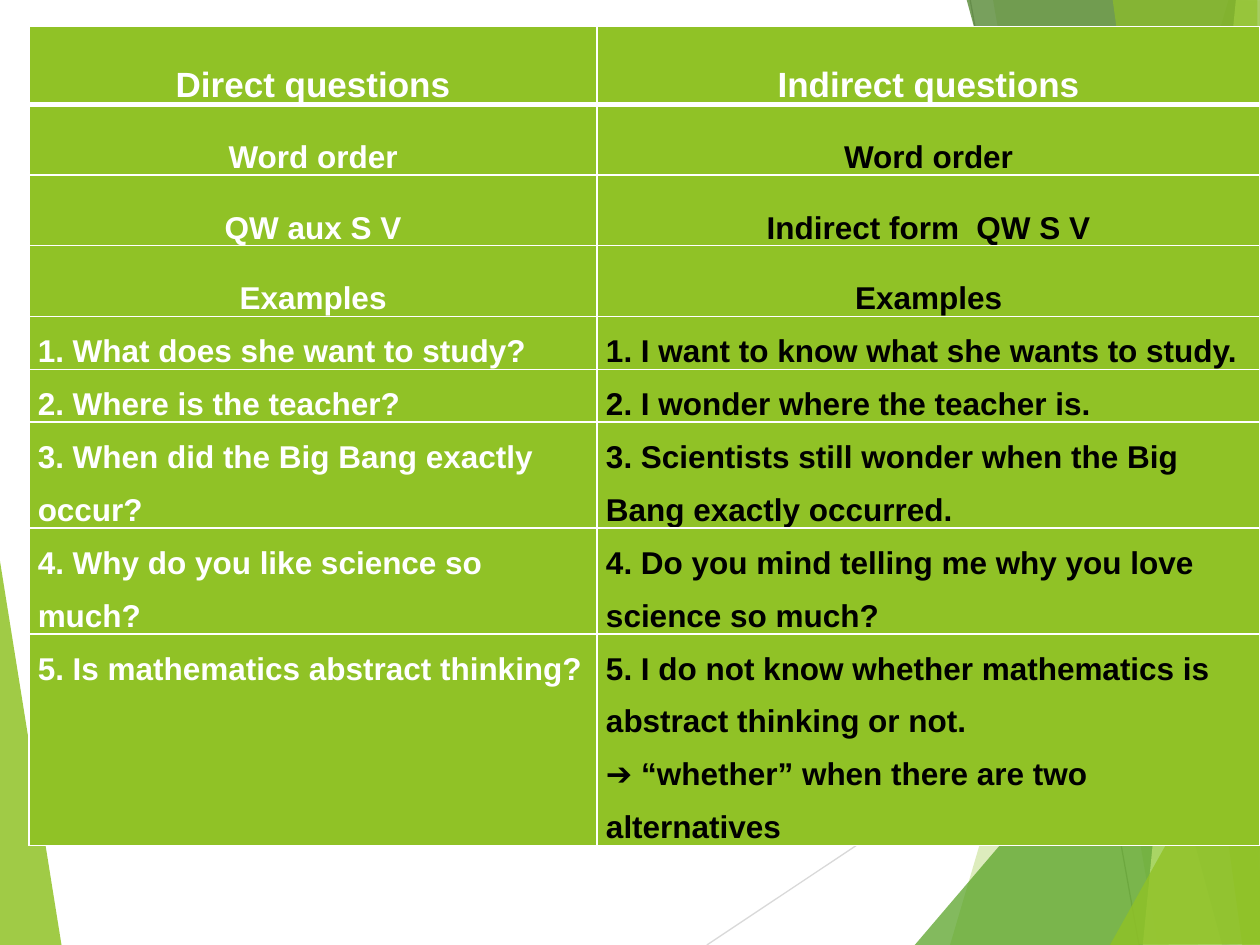
"""Build a slide comparing direct and indirect questions in a table."""
from lxml import etree
from pptx import Presentation
from pptx.dml.color import RGBColor
from pptx.enum.shapes import MSO_CONNECTOR
from pptx.enum.text import MSO_ANCHOR, PP_ALIGN
from pptx.oxml import parse_xml
from pptx.oxml.ns import nsdecls, qn
from pptx.util import Inches, Pt

STRAIGHT = MSO_CONNECTOR.STRAIGHT
TOP = MSO_ANCHOR.TOP
CENTER, LEFT = PP_ALIGN.CENTER, PP_ALIGN.LEFT

THEME = {
    "font": "Arial",
    "head_size": 20,
    "body_size": 18,
    "white": "FFFFFF",
    "black": "000000",
    "lime": "90C226",
    "green": "54A021",
    "dark": "3F7819",
    "pale": "C0E474",
    "rule": "D9D9D9",
    "rule_dark": "BFBFBF",
}

DECOR = [
    ("lime", 85, [(-0.01, 4.39), (0.49, 7.51), (-0.01, 7.5)]),
    ("rule", 100, [(5.61, 7.5), (10.01, 4.57)]),
    ("rule_dark", 100, [(7.7, 0), (9.04, 7.5)]),
    ("lime", 30, [(9.75, 0), (7.54, 7.5), (10.02, 7.51), (10.01, 0.01)]),
    ("lime", 20, [(7.88, -0.01), (9.19, 7.5), (10.01, 7.5), (10.01, -0.01)]),
    ("green", 72, [(7.26, 7.5), (10, 4.29), (10.01, 7.5)]),
    ("dark", 70, [(7.67, -0.01), (9.7, 7.5), (10.01, 7.49), (10.01, -0.01)]),
    ("pale", 70, [(9.81, -0.01), (9.07, 7.5), (10.01, 7.5), (10, -0.01)]),
    ("lime", 65, [(8.83, -0.01), (9.86, 7.5), (10, 7.5), (9.98, -0.01)]),
    ("lime", 80, [(8.81, 7.5), (10.01, 5.35), (10.01, 7.49)]),
]

ROWS = [
    (0.62, "Direct questions", "Indirect questions"),
    (0.56, "Word order", "Word order"),
    (0.56, "QW aux S V", "Indirect form  QW S V"),
    (0.56, "Examples", "Examples"),
    (0.42, "1. What does she want to study?",
     "1. I want to know what she wants to study."),
    (0.42, "2. Where is the teacher?", "2. I wonder where the teacher is."),
    (0.84, "3. When did the Big Bang exactly occur?",
     "3. Scientists still wonder when the Big Bang exactly occurred."),
    (0.84, "4. Why do you like science so much?",
     "4. Do you mind telling me why you love science so much?"),
    (1.68, "5. Is mathematics abstract thinking?",
     "5. I do not know whether mathematics is abstract thinking or not.\n"
     "➔ “whether” when there are two alternatives"),
]
COL_WIDTHS = [4.51, 5.26]
HEADING_ROWS = 4
CELL_FORMAT = {
    "margin_left": Inches(0.07),
    "margin_right": Inches(0.07),
    "margin_top": 0,
    "margin_bottom": 0,
    "vertical_anchor": TOP,
}


def rgb(name):
    return RGBColor.from_string(THEME[name])


def set_borders(cell, widths):
    tc_pr = cell._tc.get_or_add_tcPr()
    for i, (side, width) in enumerate(widths.items()):
        tc_pr.insert(i, parse_xml(
            f'<a:ln{side} {nsdecls("a")} w="{Pt(width)}"><a:solidFill>'
            f'<a:srgbClr val="{THEME["white"]}"/></a:solidFill></a:ln{side}>'))


prs = Presentation()
prs.slide_width, prs.slide_height = Inches(10), Inches(7.5)
s = prs.slides.add_slide(prs.slide_layouts[6])

for color, alpha, points in DECOR:
    pts = [(Inches(x), Inches(y)) for x, y in points]
    if len(pts) == 2:
        sp = s.shapes.add_connector(STRAIGHT, *pts[0], *pts[1])
        sp.line.color.rgb = rgb(color)
        sp.line.width = Pt(0.75)
        etree.SubElement(sp._element.spPr, qn("a:effectLst"))
    else:
        builder = s.shapes.build_freeform(*pts[0])
        builder.add_line_segments(pts[1:], close=True)
        sp = builder.convert_to_shape()
        sp.shadow.inherit = False
        sp.line.fill.background()
        sp.fill.solid()
        sp.fill.fore_color.rgb = rgb(color)
        clr = sp._element.xpath(".//a:srgbClr")[0]
        etree.SubElement(clr, qn("a:alpha"), val=str(alpha * 1000))

table = s.shapes.add_table(
    len(ROWS), len(COL_WIDTHS), Inches(0.23), Inches(0.21),
    Inches(sum(COL_WIDTHS)), Inches(sum(row[0] for row in ROWS))).table
for col, width in zip(table.columns, COL_WIDTHS):
    col.width = Inches(width)

for i, (height, *texts) in enumerate(ROWS):
    table.rows[i].height = Inches(height)
    heading = i < HEADING_ROWS
    for j, text in enumerate(texts):
        cell = table.cell(i, j)
        for key, value in CELL_FORMAT.items():
            setattr(cell, key, value)
        cell.fill.solid()
        cell.fill.fore_color.rgb = rgb("lime")
        set_borders(cell, {"L": 1, "R": 1, "T": 3 if i == 1 else 1,
                           "B": 3 if i == 0 else 1})
        font_format = {
            "name": THEME["font"],
            "size": Pt(THEME["body_size" if i else "head_size"]),
            "bold": True,
        }
        tf = cell.text_frame
        tf.text = text
        for p in tf.paragraphs:
            p.alignment = CENTER if heading else LEFT
            p.line_spacing = 2.0 if heading else 1.5
            r = p.runs[0]
            for key, value in font_format.items():
                setattr(r.font, key, value)
            r.font.color.rgb = rgb("black" if i and j else "white")

prs.save("out.pptx")
